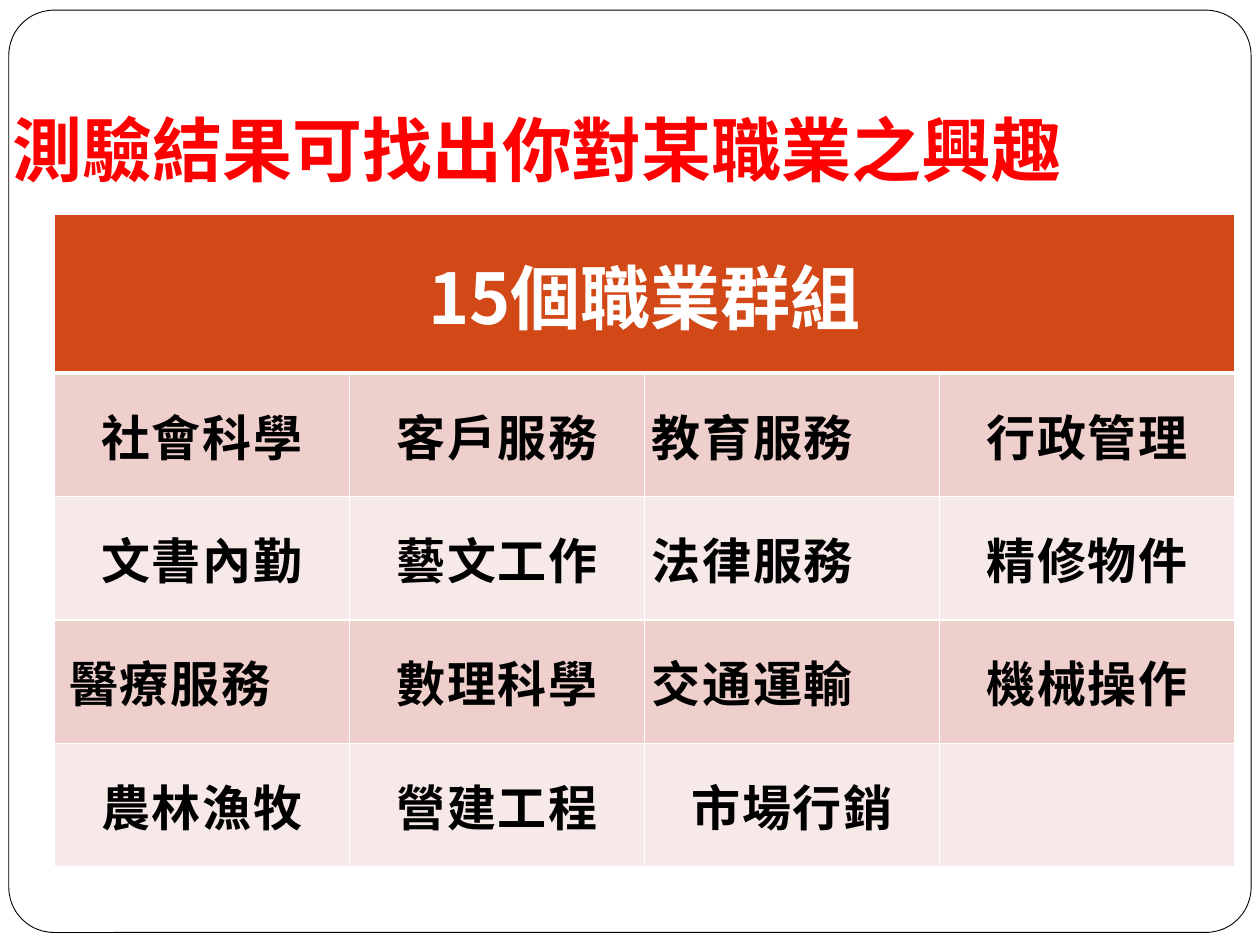
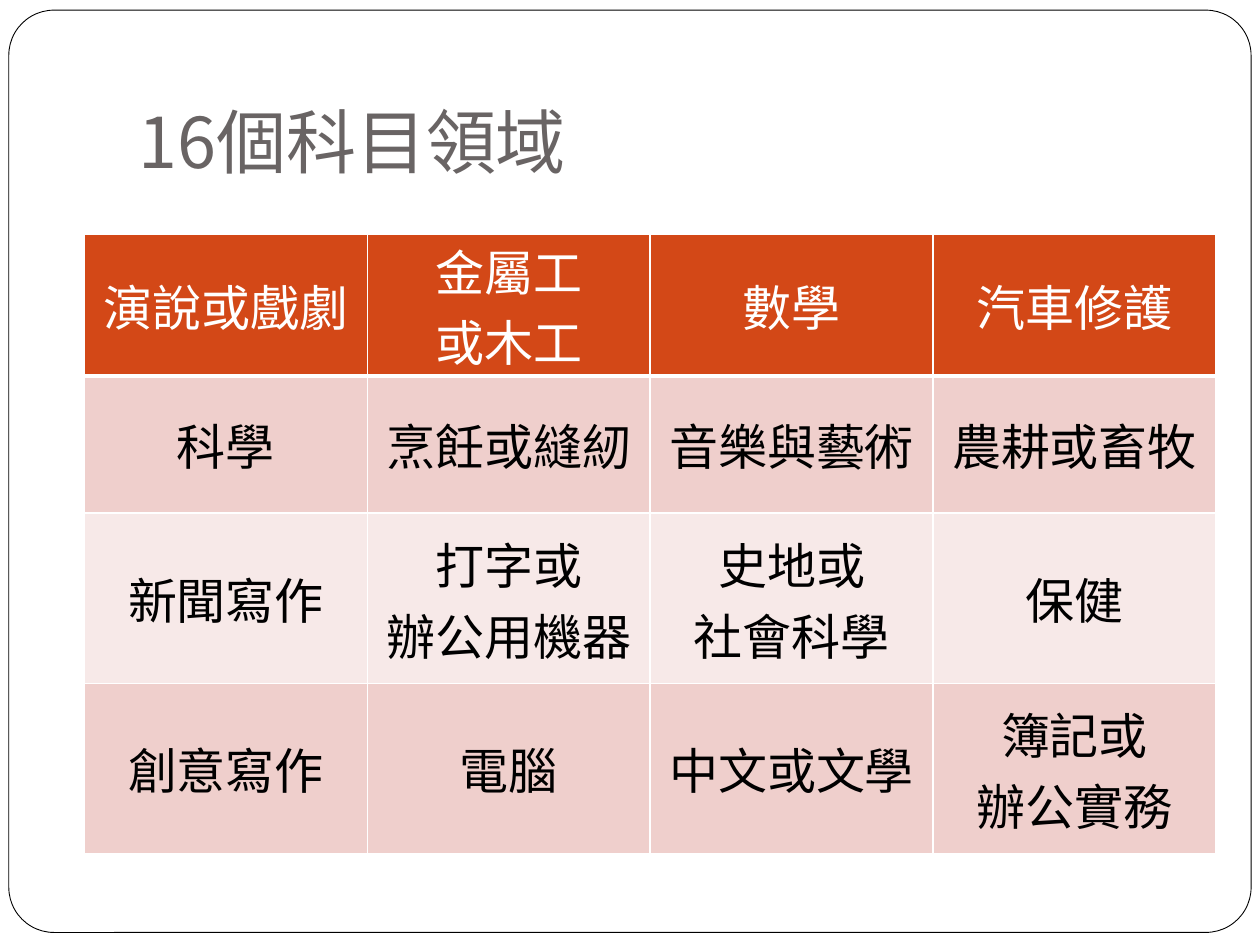
from dataclasses import dataclass

from lxml import etree
from pptx import Presentation
from pptx.dml.color import RGBColor
from pptx.enum.shapes import MSO_SHAPE
from pptx.enum.text import MSO_ANCHOR, MSO_AUTO_SIZE, PP_ALIGN
from pptx.oxml.ns import qn
from pptx.util import Inches, Pt

ROUNDED = MSO_SHAPE.ROUNDED_RECTANGLE
MIDDLE, BOTTOM = MSO_ANCHOR.MIDDLE, MSO_ANCHOR.BOTTOM
LEFT, CENTER = PP_ALIGN.LEFT, PP_ALIGN.CENTER

WIDTH, HEIGHT = Inches(10), Inches(7.5)
LATIN, CJK = "Lato", "Noto Sans CJK JP"
WHITE = RGBColor(0xFF, 0xFF, 0xFF)
BLACK = RGBColor(0x00, 0x00, 0x00)
RED = RGBColor(0xFF, 0x00, 0x00)
GRAY = RGBColor(0x69, 0x64, 0x64)
ORANGE = RGBColor(0xD3, 0x48, 0x17)
BANDS = (RGBColor(0xF7, 0xE9, 0xE8), RGBColor(0xEF, 0xCF, 0xCC))
TITLE_SIZE, CELL_SIZE = 40, 28


@dataclass(frozen=True)
class Box:
    """A rectangle in percent of the slide's width and height."""
    left: float
    top: float
    width: float
    height: float

    def lengths(self) -> tuple[int, int, int, int]:
        return (across(self.left), down(self.top),
                across(self.width), down(self.height))


@dataclass(frozen=True)
class Title:
    text: str
    box: Box
    color: RGBColor
    font: str = CJK
    bold: bool = False


@dataclass(frozen=True)
class Entry:
    """A table entry set to the left, indented in inches."""
    text: str
    indent: float


@dataclass(frozen=True)
class Grid:
    """A table whose first row is the header; row heights in percent."""
    left: float
    top: float
    width: float
    row_heights: tuple[float, ...]
    rows: tuple[tuple[str | Entry, ...], ...]
    header_size: int = CELL_SIZE
    bold: bool = False
    side_inset: float = 0
    spacing: int = 0
    merge_header: bool = False


FRAME = Box(0.7, 1.07, 98.6, 97.6)

CAREERS_TITLE = Title("測驗結果可找出你對某職業之興趣", Box(0, 4.8, 100, 16.67),
                      RED, font=LATIN, bold=True)
CAREERS = Grid(
    4.3, 22.67, 93.7, (16.8,) + (13.07,) * 4,
    (("15個職業群組", "", "", ""),
     ("社會科學", "客戶服務", Entry("教育服務", 0.06), "行政管理"),
     ("文書內勤", "藝文工作", Entry("法律服務", 0.06), "精修物件"),
     (Entry("醫療服務", 0.12), "數理科學", Entry("交通運輸", 0.06), "機械操作"),
     ("農林漁牧", "營建工程", "市場行銷", "")),
    header_size=TITLE_SIZE, bold=True, side_inset=0.02, spacing=1,
    merge_header=True)

SUBJECTS_TITLE = Title("16個科目領域", Box(10, 4, 85, 16.67), GRAY)
SUBJECTS = Grid(
    6.7, 24.8, 89.8, (14.53, 14.53, 18, 18),
    (("演說或戲劇", "金屬工\n或木工", "數學", "汽車修護"),
     ("科學", "烹飪或縫紉", "音樂與藝術", "農耕或畜牧"),
     ("新聞寫作", "打字或\v辦公用機器", "史地或\v社會科學", "保健"),
     ("創意寫作", "電腦", "中文或文學", "簿記或\v辦公實務")))


def across(percent: float) -> int:
    return round(WIDTH * percent / 100)


def down(percent: float) -> int:
    return round(HEIGHT * percent / 100)


def write(frame, text: str, *, size: int, color: RGBColor, font: str = CJK,
          bold: bool = False, align=CENTER, spacing: int = 0) -> None:
    frame.text = text
    for paragraph in frame.paragraphs:
        paragraph.alignment = align
        for run in paragraph.runs:
            run.font.size = Pt(size)
            run.font.bold = bold
            run.font.color.rgb = color
            run.font.name = font
            properties = run.font._element
            etree.SubElement(properties, qn("a:ea")).set("typeface", CJK)
            if spacing:
                properties.set("spc", str(spacing * 100))


def add_frame(layout, slide) -> None:
    """Draw the rounded page frame and hand it to the shared layout."""
    page = slide.shapes.add_shape(ROUNDED, *FRAME.lengths())
    page.adjustments[0] = 0.049
    page.shadow.inherit = False
    page.fill.solid()
    page.fill.fore_color.rgb = WHITE
    page.line.color.rgb = BLACK
    page.line.width = Pt(0.5)
    page.element.nvSpPr.cNvPr.set("id", "20")
    layout.shapes.element.insert(2, page.element)


def set_title(slide, title: Title) -> None:
    heading = slide.shapes.title
    heading.left, heading.top, heading.width, heading.height = title.box.lengths()
    frame = heading.text_frame
    frame.word_wrap = True
    frame.auto_size = MSO_AUTO_SIZE.NONE
    frame.vertical_anchor = BOTTOM
    frame.margin_left = frame.margin_right = frame.margin_bottom = Inches(0.1)
    frame.margin_top = Inches(0.05)
    write(frame, title.text, size=TITLE_SIZE, color=title.color,
          font=title.font, bold=title.bold, align=LEFT)


def set_borders(cell, bottom: int) -> None:
    """Rule all four sides in white, with the bottom width in points."""
    properties = cell._tc.get_or_add_tcPr()
    widths = {"a:lnL": 1, "a:lnR": 1, "a:lnT": 1, "a:lnB": bottom}
    for place, (side, width) in enumerate(widths.items()):
        line = etree.Element(qn(side), w=str(Pt(width)))
        fill = etree.SubElement(line, qn("a:solidFill"))
        etree.SubElement(fill, qn("a:srgbClr")).set("val", str(WHITE))
        properties.insert(place, line)


def fill_cell(cell, entry: str | Entry, grid: Grid, row: int) -> None:
    header = row == 0
    cell.fill.solid()
    cell.fill.fore_color.rgb = ORANGE if header else BANDS[row % 2]
    set_borders(cell, 3 if header else 1)
    cell.vertical_anchor = MIDDLE
    cell.margin_top = cell.margin_bottom = 0
    cell.margin_left = cell.margin_right = Inches(grid.side_inset)
    align = CENTER
    if isinstance(entry, Entry):
        cell.margin_left = Inches(entry.indent)
        entry, align = entry.text, LEFT
    if entry:
        write(cell.text_frame, entry, bold=grid.bold, align=align,
              size=grid.header_size if header else CELL_SIZE,
              color=WHITE if header else BLACK,
              spacing=0 if header else grid.spacing)


def add_grid(slide, grid: Grid) -> None:
    columns = len(grid.rows[0])
    box = Box(grid.left, grid.top, grid.width, sum(grid.row_heights))
    table = slide.shapes.add_table(len(grid.rows), columns, *box.lengths()).table
    table.first_row = table.horz_banding = False
    for column in table.columns:
        column.width = across(grid.width / columns)
    for row, (height, entries) in enumerate(zip(grid.row_heights, grid.rows)):
        table.rows[row].height = down(height)
        for column, entry in enumerate(entries):
            fill_cell(table.cell(row, column), entry, grid, row)
    if grid.merge_header:
        table.cell(0, 0).merge(table.cell(0, columns - 1))


def main() -> None:
    deck = Presentation()
    deck.slide_width, deck.slide_height = WIDTH, HEIGHT
    title_only = deck.slide_layouts[5]
    pages = ((CAREERS_TITLE, CAREERS), (SUBJECTS_TITLE, SUBJECTS))
    for number, (title, grid) in enumerate(pages):
        slide = deck.slides.add_slide(title_only)
        if number == 0:
            add_frame(title_only, slide)
        set_title(slide, title)
        add_grid(slide, grid)
    deck.save("out.pptx")


if __name__ == "__main__":
    main()
